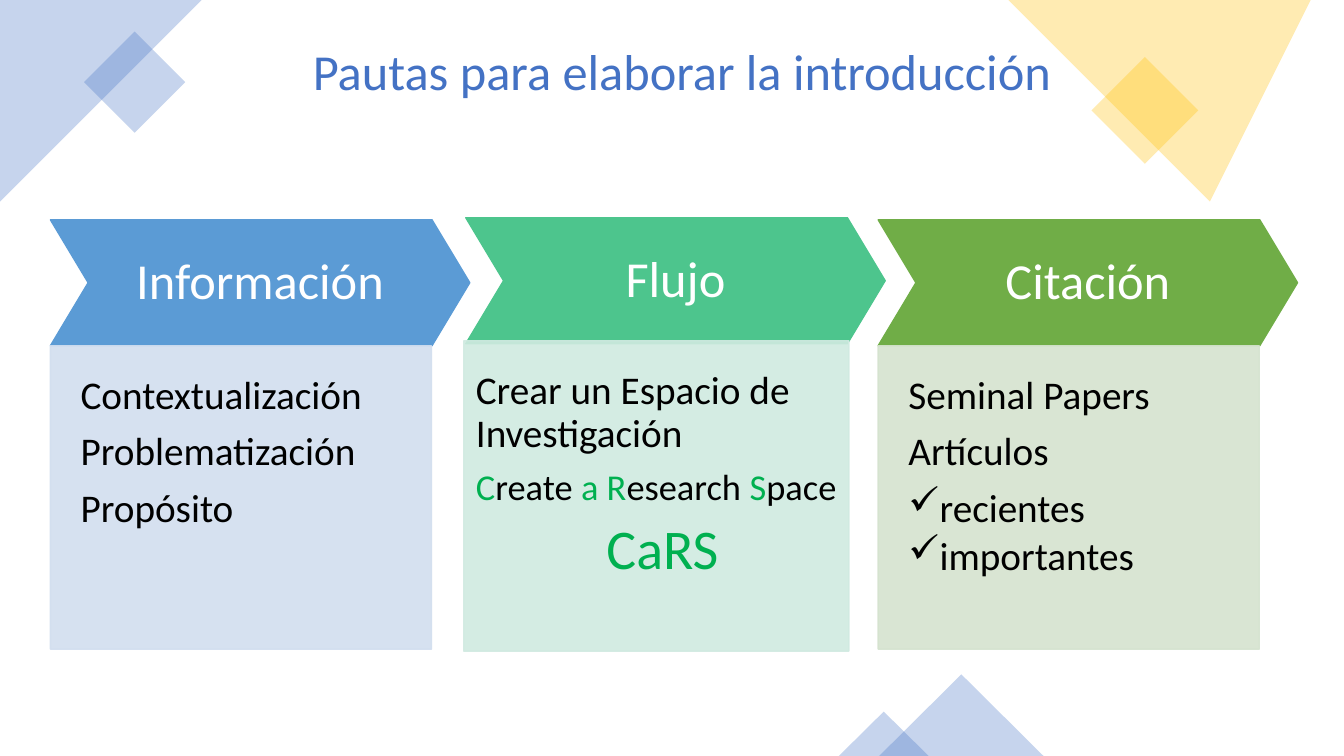
from dataclasses import dataclass

from lxml.etree import SubElement
from pptx import Presentation
from pptx.dml.color import RGBColor
from pptx.enum.shapes import MSO_SHAPE
from pptx.enum.text import MSO_ANCHOR, PP_ALIGN
from pptx.oxml.ns import qn
from pptx.util import Inches, Pt


@dataclass(frozen=True)
class Theme:
    font: str = "Calibri"
    blue: str = "4472C4"
    gold: str = "FFC000"
    white: str = "FFFFFF"
    black: str = "000000"
    accent: str = "00B050"
    heading_size: int = 36
    body_size: int = 28
    phrase_size: int = 26
    acronym_size: int = 40
    ornament_opacity: int = 30
    panel_opacity: int = 90


THEME = Theme()
TITLE = "Pautas para elaborar la introducción"


def line(*spans, size=THEME.body_size, align=PP_ALIGN.LEFT, bullet=None):
    """One paragraph; each span is (text, colour)."""
    return {"spans": spans, "size": size, "align": align, "bullet": bullet}


def plain(text, bullet=None):
    return line((text, THEME.black), bullet=bullet)


COLUMNS = [
    {
        "heading": "Información", "fill": "5B9BD5", "panel_fill": "D2DEEF",
        "chevron": (0.5, 2.18), "panel": (0.5, 3.43, 3.78, 3.01), "insets": (0.3, 0.3),
        "lines": [plain("Contextualización"), plain("Problematización"), plain("Propósito")],
    },
    {
        "heading": "Flujo", "fill": "4DC58D", "panel_fill": "D0EAE1",
        "chevron": (4.62, 2.16), "panel": (4.6, 3.38, 3.82, 3.08), "insets": (0.12, 0),
        "lines": [
            plain("Crear un Espacio de Investigación"),
            line(("C", THEME.accent), ("reate ", THEME.black), ("a R", THEME.accent),
                 ("esearch ", THEME.black), ("S", THEME.accent), ("pace", THEME.black),
                 size=THEME.phrase_size),
            line(("CaRS", THEME.accent), size=THEME.acronym_size, align=PP_ALIGN.CENTER),
        ],
    },
    {
        "heading": "Citación", "fill": "70AD47", "panel_fill": "D5E3CF",
        "chevron": (8.71, 2.18), "panel": (8.71, 3.43, 3.78, 3.01), "insets": (0.3, 0.3),
        "lines": [plain("Seminal Papers"), plain("Artículos"),
                  plain("recientes", "✓"), plain("importantes", "✓")],
    },
]
CHEVRON_SIZE = (4.16, 1.25)
CHEVRON_POINT = 0.3
BULLET_INDENT = 0.31

CORNERS = [
    (THEME.blue, [(0, 0), (1.53, 0), (1.83, 0.3), (0.41, 1.71), (0, 1.3)]),
    (THEME.gold, [(10.23, 0), (13.33, 0), (13.33, 0.28), (11.93, 1.62)]),
]
ORNAMENTS = [  # preset, colour, box, rotation
    (MSO_SHAPE.RECTANGLE, THEME.blue, (0.98, 0.46, 0.71, 0.71), 45),
    (MSO_SHAPE.RECTANGLE, THEME.gold, (10.98, 0.72, 0.75, 0.75), 45),
    (MSO_SHAPE.ISOSCELES_TRIANGLE, THEME.blue, (8.72, 6.69, 1.63, 0.81), 0),
    (MSO_SHAPE.ISOSCELES_TRIANGLE, THEME.blue, (8.32, 7.06, 0.89, 0.44), 0),
]


def paint(fill, colour, opacity=100):
    fill.solid()
    fill.fore_color.rgb = RGBColor.from_string(colour)
    if opacity < 100:
        for node in fill._xPr.iter(qn("a:srgbClr")):
            SubElement(node, qn("a:alpha")).set("val", str(opacity * 1000))


def style(shape, colour, opacity=100, outlined=False):
    shape.shadow.inherit = False
    if outlined:
        shape.line.width = Pt(1)
        paint(shape.line.fill, colour, opacity)
    else:
        shape.line.fill.background()
    paint(shape.fill, colour, opacity)


def add_box(page, preset, box):
    return page.shapes.add_shape(preset, *(Inches(length) for length in box))


def add_ornaments(page):
    for colour, points in CORNERS:
        builder = page.shapes.build_freeform(*points[0], scale=Inches(1))
        builder.add_line_segments(points[1:], close=True)
        style(builder.convert_to_shape(), colour, THEME.ornament_opacity)
    for preset, colour, box, rotation in ORNAMENTS:
        ornament = add_box(page, preset, box)
        ornament.rotation = rotation
        style(ornament, colour, THEME.ornament_opacity)


def set_margins(frame, left, top, right, bottom):
    frame.word_wrap = True
    frame.margin_left, frame.margin_top = Inches(left), Inches(top)
    frame.margin_right, frame.margin_bottom = Inches(right), Inches(bottom)


def add_bullet(para, symbol):
    properties = para._p.get_or_add_pPr()
    properties.set("marL", str(Inches(BULLET_INDENT)))
    properties.set("indent", str(-Inches(BULLET_INDENT)))
    SubElement(properties, qn("a:buChar")).set("char", symbol)


def write(frame, lines, gap=0.35):
    """Write lines; the gap after each is a share of its type size."""
    for index, content in enumerate(lines):
        para = frame.add_paragraph() if index else frame.paragraphs[0]
        para.alignment = content["align"]
        para.line_spacing = 0.9
        para.space_before = Pt(0)
        share = 0.15 if content["bullet"] else gap
        para.space_after = Pt(round(content["size"] * share, 1))
        if content["bullet"]:
            add_bullet(para, content["bullet"])
        for text, colour in content["spans"]:
            span = para.add_run()
            span.text = text
            span.font.name = THEME.font
            span.font.size = Pt(content["size"])
            span.font.color.rgb = RGBColor.from_string(colour)


def heading_line(text, colour):
    return line((text, colour), size=THEME.heading_size, align=PP_ALIGN.CENTER)


def add_title(page):
    title = page.shapes.title
    title.left, title.top = Inches(1.38), Inches(0.12)
    title.width, title.height = Inches(10.77), Inches(1.24)
    title.text_frame.vertical_anchor = MSO_ANCHOR.MIDDLE
    write(title.text_frame, [heading_line(TITLE, THEME.blue)], gap=0)


def add_column(page, column):
    chevron = add_box(page, MSO_SHAPE.CHEVRON, column["chevron"] + CHEVRON_SIZE)
    chevron.adjustments[0] = CHEVRON_POINT
    style(chevron, column["fill"], outlined=True)
    set_margins(chevron.text_frame, 0.15, 0.15, 0.15, 0.15)
    chevron.text_frame.vertical_anchor = MSO_ANCHOR.MIDDLE
    write(chevron.text_frame, [heading_line(column["heading"], THEME.white)])

    panel = add_box(page, MSO_SHAPE.RECTANGLE, column["panel"])
    style(panel, column["panel_fill"], THEME.panel_opacity, outlined=True)
    left, right = column["insets"]
    set_margins(panel.text_frame, left, 0.3, right, 0.6)
    panel.text_frame.vertical_anchor = MSO_ANCHOR.TOP
    write(panel.text_frame, column["lines"])


def main():
    deck = Presentation()
    deck.slide_width, deck.slide_height = Inches(13.33), Inches(7.5)
    page = deck.slides.add_slide(deck.slide_layouts[5])
    add_ornaments(page)
    add_title(page)
    for column in COLUMNS:
        add_column(page, column)
    deck.save("out.pptx")


if __name__ == "__main__":
    main()
